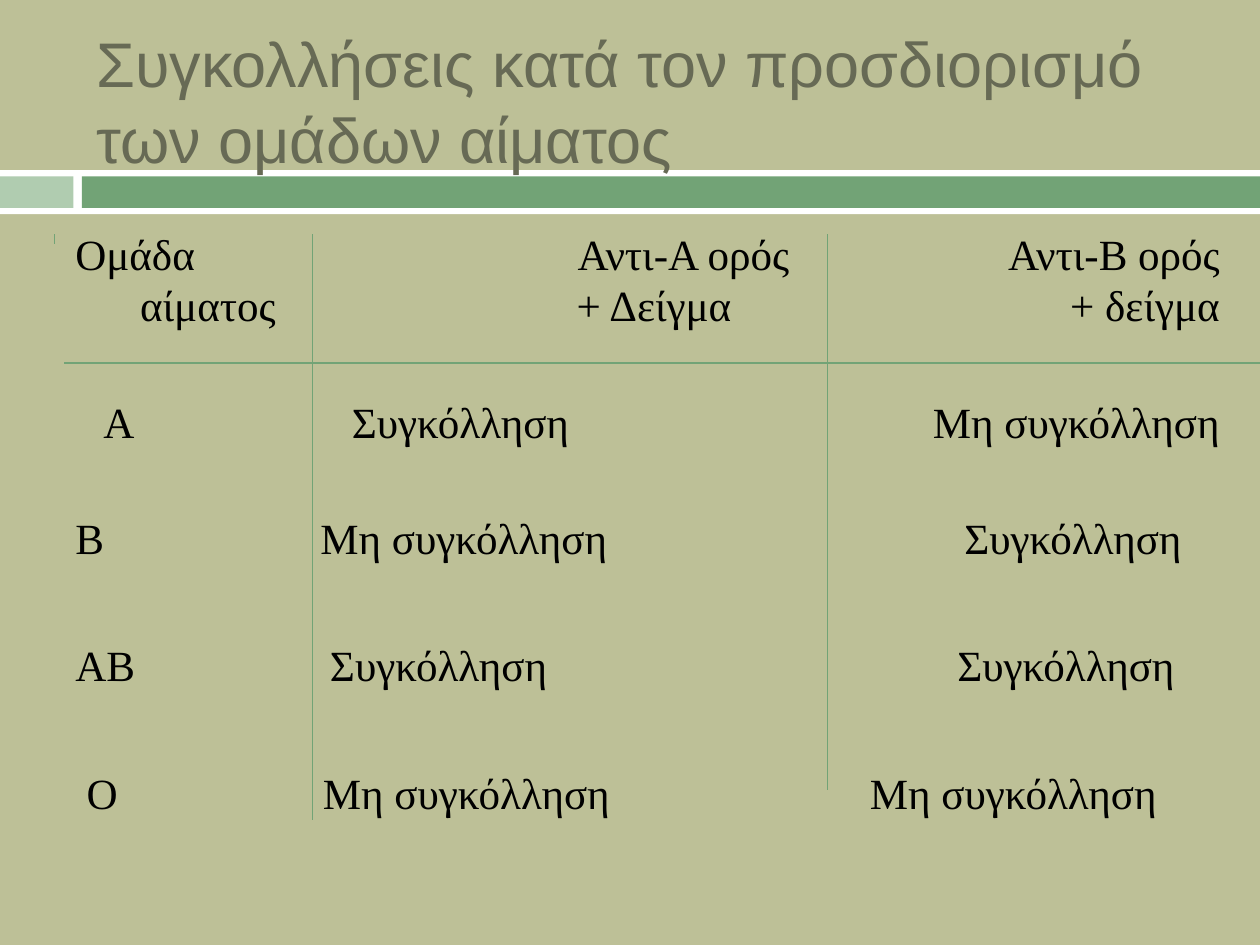
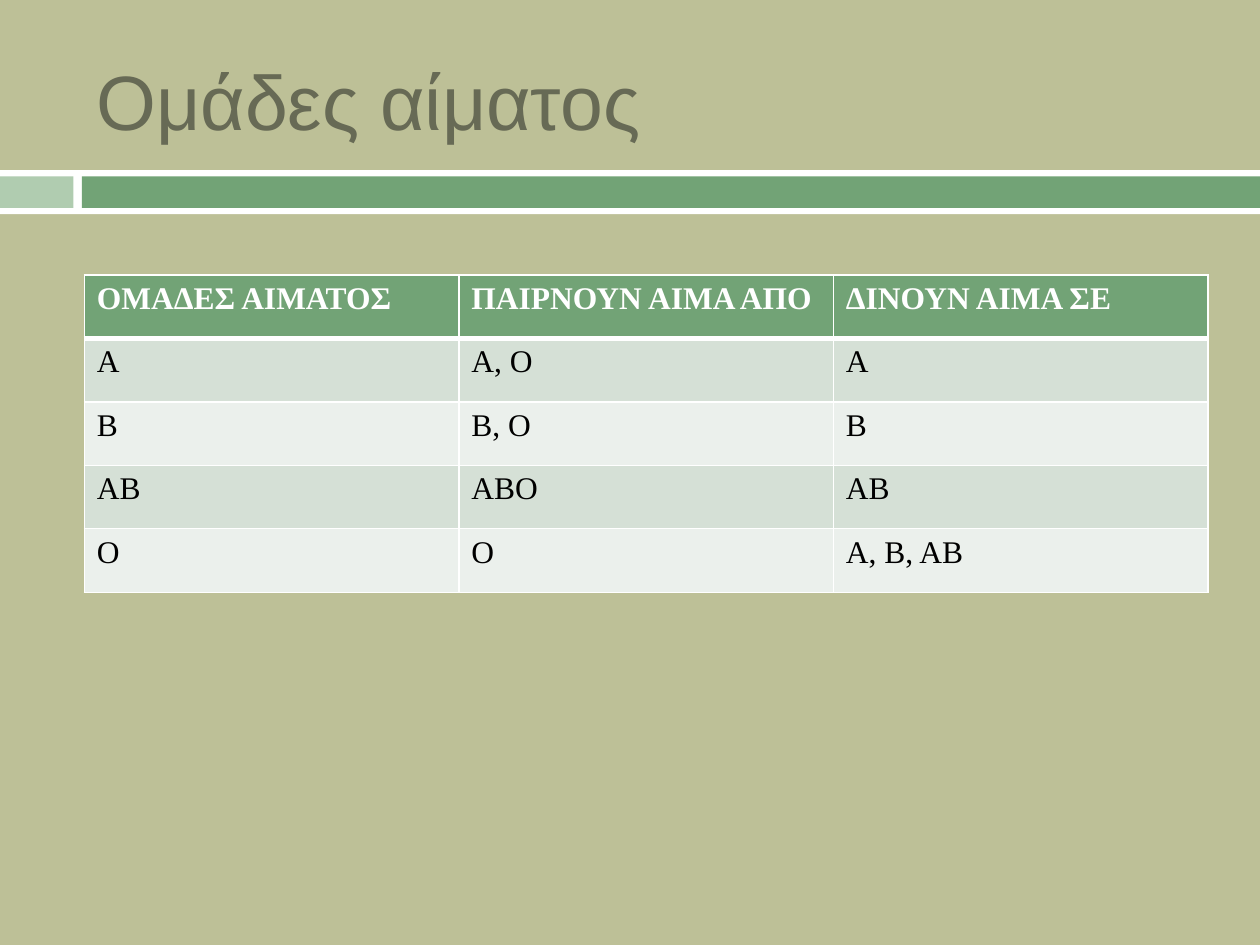
from lxml.etree import SubElement
from pptx import Presentation
from pptx.dml.color import RGBColor
from pptx.enum.shapes import MSO_CONNECTOR, MSO_SHAPE
from pptx.enum.text import MSO_ANCHOR
from pptx.oxml.ns import qn
from pptx.util import Pt

BACKGROUND = "BDC097"
WHITE = "FFFFFF"
BLACK = "000000"
GREEN = "72A376"
LIGHT_GREEN = "B0CCB0"
TITLE_COLOR = "676A55"
ROW_FILLS = ("EBF0EC", "D5E0D6")
TITLE_FONT = "Arial"
BODY_FONT = "Times New Roman"

# Each line: space before, then (text, offset, tab alignment) for its columns
RIGHT_EDGE = 654
AGGLUTINATION = [
    (0, [("Ομάδα", 0, "l"), ("Αντι-Α ορός", 287, "l"),
         ("Αντι-Β ορός", RIGHT_EDGE, "r")]),
    (0, [("αίματος", 37, "l"), ("+ Δείγμα", 286.5, "l"),
         ("+ δείγμα", RIGHT_EDGE, "r")]),
    (36.6, [("Α", 16, "l"), ("Συγκόλληση", 158, "l"),
            ("Μη συγκόλληση", RIGHT_EDGE, "r")]),
    (36.6, [("Β", 0, "l"), ("Μη συγκόλληση", 140, "l"),
            ("Συγκόλληση", 508, "l")]),
    (43.4, [("ΑΒ", 0, "l"), ("Συγκόλληση", 145.5, "l"),
            ("Συγκόλληση", 504, "l")]),
    (43.4, [("Ο", 6.5, "l"), ("Μη συγκόλληση", 141.5, "l"),
            ("Μη συγκόλληση", 454, "l")]),
]
DONORS = [
    ("ΟΜΑΔΕΣ ΑΙΜΑΤΟΣ", "ΠΑΙΡΝΟΥΝ ΑΙΜΑ ΑΠΟ", "ΔΙΝΟΥΝ ΑΙΜΑ ΣΕ"),
    ("Α", "Α, Ο", "Α"),
    ("Β", "Β, Ο", "Β"),
    ("ΑΒ", "ΑΒΟ", "ΑΒ"),
    ("Ο", "Ο", "Α, Β, ΑΒ"),
]


def rgb(color):
    return RGBColor.from_string(color)


def add_run(p, text, font, size, color, bold=False):
    r = p.add_run()
    r.text = text
    r.font.name = font
    r.font.size = Pt(size)
    r.font.bold = bold
    r.font.color.rgb = rgb(color)


def add_box(slide, left, top, width, height, anchor=MSO_ANCHOR.TOP):
    """Add a wrapping text box and return its text frame."""
    tf = slide.shapes.add_textbox(Pt(left), Pt(top), Pt(width), Pt(height)).text_frame
    tf.word_wrap = True
    tf.vertical_anchor = anchor
    return tf


def add_bar(slide, left, top, width, height, color):
    sp = slide.shapes.add_shape(
        MSO_SHAPE.RECTANGLE, Pt(left), Pt(top), Pt(width), Pt(height))
    sp.shadow.inherit = False
    sp.fill.solid()
    sp.fill.fore_color.rgb = rgb(color)
    sp.line.fill.background()


def add_rule(slide, x1, y1, x2, y2):
    line = slide.shapes.add_connector(
        MSO_CONNECTOR.STRAIGHT, Pt(x1), Pt(y1), Pt(x2), Pt(y2))
    line.line.color.rgb = rgb(GREEN)
    line.line.width = Pt(0.79)
    SubElement(line._element.spPr, qn("a:effectLst"))


def add_slide(prs, title, size):
    """Add a slide with the shared background, band and title."""
    slide = prs.slides.add_slide(prs.slide_layouts[6])
    slide.background.fill.solid()
    slide.background.fill.fore_color.rgb = rgb(BACKGROUND)
    add_bar(slide, 0, 97.2, 720, 25.2, WHITE)
    add_bar(slide, 0, 100.8, 42, 18, LIGHT_GREEN)
    add_bar(slide, 46.8, 100.8, 673.2, 18, GREEN)
    p = add_box(slide, 48, 18, 642, 78, MSO_ANCHOR.MIDDLE).paragraphs[0]
    p.line_spacing = Pt(round(size * 1.205, 1))
    add_run(p, title, TITLE_FONT, size, TITLE_COLOR)
    return slide


def add_tabbed_lines(slide, lines):
    """Set lines of text whose columns sit at their own tab stops."""
    tf = add_box(slide, 36, 126, 669.6, 393)
    for i, (space_before, columns) in enumerate(lines):
        p = tf.add_paragraph() if i else tf.paragraphs[0]
        p.line_spacing = Pt(29.7)
        p.space_before = Pt(space_before)
        tabs = SubElement(p._p.get_or_add_pPr(), qn("a:tabLst"))
        for text, offset, align in columns:
            if offset:
                SubElement(tabs, qn("a:tab"), pos=str(Pt(offset)), algn=align)
                text = "\t" + text
            add_run(p, text, BODY_FONT, 24.6, BLACK)


def set_border(cell, side, width):
    ln = SubElement(cell._tc.get_or_add_tcPr(), qn(f"a:ln{side}"), w=str(Pt(width)))
    fill = SubElement(ln, qn("a:solidFill"))
    SubElement(fill, qn("a:srgbClr"), val=WHITE)


def add_banded_table(slide, rows, left, top, width, row_height):
    table = slide.shapes.add_table(
        len(rows), len(rows[0]), Pt(left), Pt(top),
        Pt(width), Pt(row_height * len(rows))).table
    for i, row in enumerate(rows):
        header = i == 0
        for j, text in enumerate(row):
            cell = table.cell(i, j)
            for side in "LRTB":
                under_header = (i, side) in ((0, "B"), (1, "T"))
                set_border(cell, side, 3 if under_header else 1)
            cell.fill.solid()
            cell.fill.fore_color.rgb = rgb(GREEN if header else ROW_FILLS[i % 2])
            add_run(cell.text_frame.paragraphs[0], text, BODY_FONT, 18,
                    WHITE if header else BLACK, header)


def main():
    prs = Presentation()
    prs.slide_width, prs.slide_height = Pt(720), Pt(540)

    s = add_slide(prs, "Συγκολλήσεις κατά τον προσδιορισμό των ομάδων αίματος", 36)
    add_tabbed_lines(s, AGGLUTINATION)
    add_rule(s, 36.7, 207.4, 720, 207.4)
    for x, bottom in ((31, 139.5), (473, 451.5), (178.5, 468.5)):
        add_rule(s, x, 134, x, bottom)

    s = add_slide(prs, "Ομάδες αίματος", 44)
    add_banded_table(s, DONORS, 48.2, 157, 642, 36.3)

    prs.save("out.pptx")


if __name__ == "__main__":
    main()
